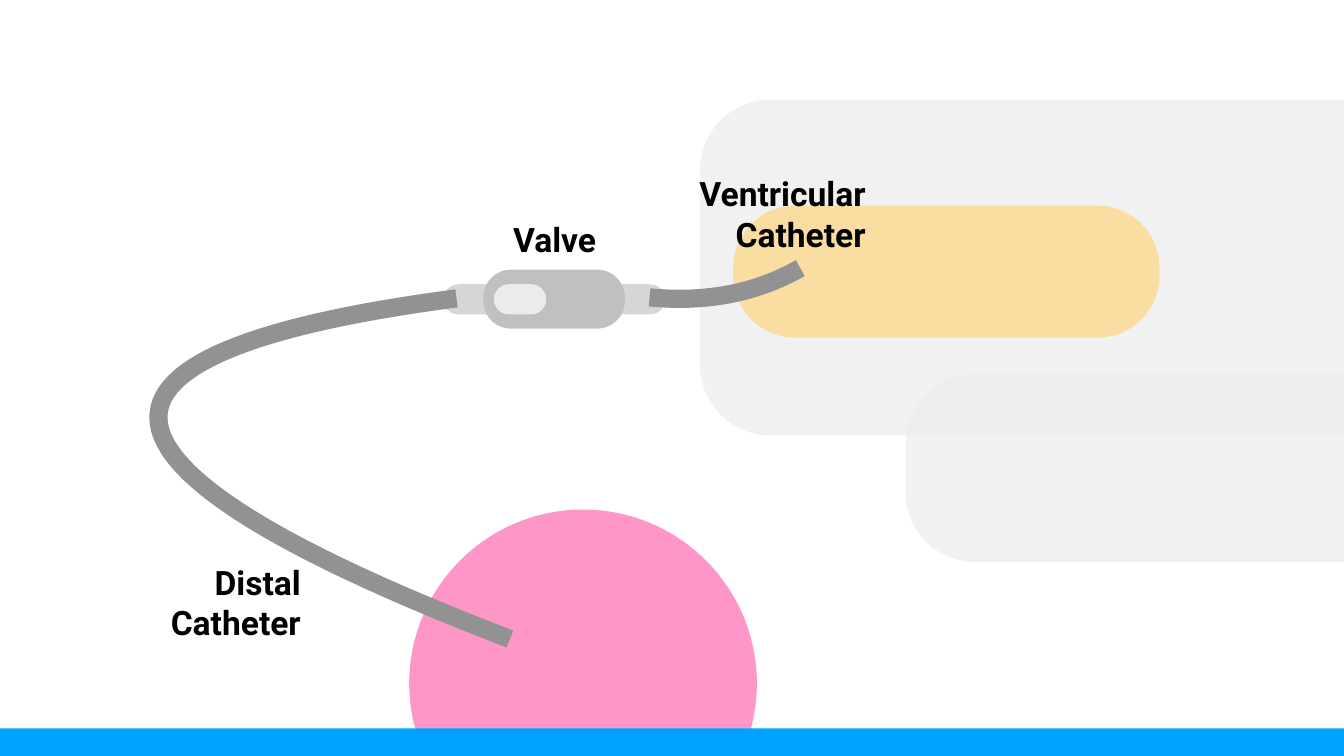
import lxml.etree
import pptx
import pptx.dml.color
import pptx.enum.shapes
import pptx.enum.text
import pptx.oxml.ns
import pptx.util

PX = 9144  # EMU per px, at 100 px to the inch
SLIDE_WIDTH, SLIDE_HEIGHT = 2667, 1500

RGBColor = pptx.dml.color.RGBColor
BLACK = RGBColor(0x00, 0x00, 0x00)
PINK = RGBColor(0xFF, 0x2F, 0x92)
YELLOW = RGBColor(0xFF, 0xD4, 0x79)
BLUE = RGBColor(0x00, 0xA2, 0xFF)
PALE_GRAY = RGBColor(0xEB, 0xEB, 0xEB)
LIGHT_GRAY = RGBColor(0xD6, 0xD6, 0xD6)
MID_GRAY = RGBColor(0xC0, 0xC0, 0xC0)
TUBE_GRAY = RGBColor(0x92, 0x92, 0x92)

SHAPES = pptx.enum.shapes.MSO_SHAPE
CURVE_STEPS = 60


def emu(length):
    return round(length * PX)


def place(box, left, top, width, height):
    """Turn a part's place inside a box into a place on the slide."""
    return box[0] + left, box[1] + top, width, height


def add_filled(page, kind, box, color, opacity=100, rounding=None):
    shape = page.shapes.add_shape(kind, *map(emu, box))
    shape.shadow.inherit = False
    shape.line.fill.background()
    shape.fill.solid()
    shape.fill.fore_color.rgb = color
    if rounding is not None:
        shape.adjustments[0] = rounding
    if opacity < 100:
        tint = shape.fill._xPr.find(".//" + pptx.oxml.ns.qn("a:srgbClr"))
        alpha = lxml.etree.SubElement(tint, pptx.oxml.ns.qn("a:alpha"))
        alpha.set("val", str(opacity * 1000))
    return shape


def add_text(page, box, text, font="Roboto", size=48, bold=True, color=BLACK,
             align=pptx.enum.text.PP_ALIGN.RIGHT):
    frame = page.shapes.add_textbox(*map(emu, box)).text_frame
    frame.word_wrap = False
    frame.auto_size = pptx.enum.text.MSO_AUTO_SIZE.SHAPE_TO_FIT_TEXT
    frame.vertical_anchor = pptx.enum.text.MSO_ANCHOR.MIDDLE
    frame.margin_left = frame.margin_right = emu(6)
    frame.margin_top = frame.margin_bottom = emu(6)
    para = frame.paragraphs[0]
    para.alignment = align
    for index, line in enumerate(text.split("\n")):
        if index:
            para.add_line_break()
        span = para.add_run()
        span.text = line
        span.font.name = font
        span.font.size = pptx.util.Pt(size)
        span.font.bold = bold
        span.font.color.rgb = color


def bezier_point(controls, t):
    weights = ((1 - t) ** 3, 3 * t * (1 - t) ** 2, 3 * t ** 2 * (1 - t), t ** 3)
    return tuple(sum(w * point[axis] for w, point in zip(weights, controls))
                 for axis in (0, 1))


def add_catheter(page, box, controls):
    """Draw a tube along a cubic curve whose control points are relative to the box."""
    points = []
    for step in range(CURVE_STEPS + 1):
        x, y = bezier_point(controls, step / CURVE_STEPS)
        points.append((emu(box[0] + x), emu(box[1] + y)))
    builder = page.shapes.build_freeform(*points[0], scale=1.0)
    builder.add_line_segments(points[1:], close=False)
    tube = builder.convert_to_shape()
    tube.shadow.inherit = False
    tube.fill.background()
    tube.line.color.rgb = TUBE_GRAY
    tube.line.width = pptx.util.Pt(26)


def add_head(page, box):
    """Skull with the ventricle inside it and the neck and face below."""
    rounded = SHAPES.ROUNDED_RECTANGLE
    add_filled(page, rounded, box, PALE_GRAY, 66, 0.21)
    add_filled(page, rounded, place(box, 66, 210, 846, 262), YELLOW, 66, 0.47)
    add_filled(page, rounded, place(box, 408, 545, 1229, 372), PALE_GRAY, 66, 0.37)


def add_valve(page, box):
    """Connector ends, valve body and reservoir window."""
    rounded = SHAPES.ROUNDED_RECTANGLE
    add_filled(page, rounded, place(box, 0, 29, 440, 60), LIGHT_GRAY, rounding=0.5)
    add_filled(page, rounded, place(box, 79, 0, 281, 117), MID_GRAY, rounding=0.47)
    add_filled(page, rounded, place(box, 100, 29, 104, 60), PALE_GRAY, rounding=0.5)


def add_shunt_slide(deck):
    page = deck.slides.add_slide(deck.slide_layouts[6])
    add_filled(page, SHAPES.OVAL, (812, 1011, 690, 690), PINK, 50)
    add_head(page, (1389, 198, 1403, 666))
    add_filled(page, SHAPES.RECTANGLE, (-10, 1445, 2687, 60), BLUE)
    add_valve(page, (880, 535, 440, 117))
    add_catheter(page, (1289, 532), ((0, 58), (113, 69), (213, 49), (299, 0)))
    add_catheter(page, (314, 592), ((698, 676), (-195, 333), (-231, 108), (592, 0)))
    add_text(page, (1370, 339, 354, 170), "Ventricular\nCatheter")
    add_text(page, (314, 1109, 289, 170), "Distal\nCatheter")
    add_text(page, (1010, 429, 179, 90), "Valve")


def main():
    deck = pptx.Presentation()
    deck.slide_width = emu(SLIDE_WIDTH)
    deck.slide_height = emu(SLIDE_HEIGHT)
    add_shunt_slide(deck)
    deck.save("out.pptx")


if __name__ == "__main__":
    main()
